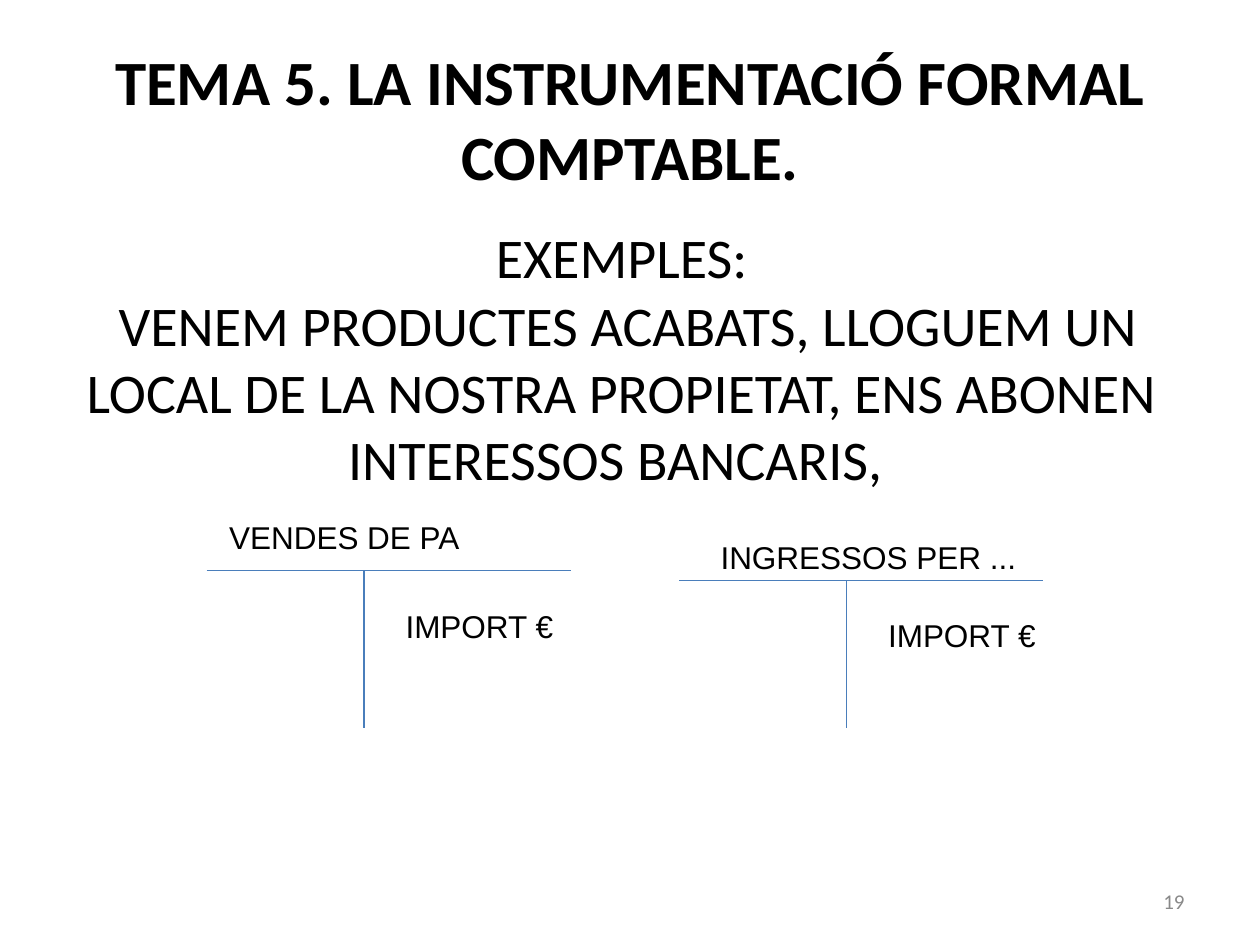
from dataclasses import dataclass

from lxml.etree import SubElement
from pptx import Presentation
from pptx.dml.color import RGBColor
from pptx.enum.shapes import MSO_CONNECTOR
from pptx.enum.text import MSO_ANCHOR, MSO_AUTO_SIZE, PP_ALIGN
from pptx.oxml.ns import qn
from pptx.util import Pt

PX = 9144  # EMU per px, 100 px to the inch


@dataclass(frozen=True)
class Theme:
    ink = RGBColor(0, 0, 0)
    gray = RGBColor(0x89, 0x89, 0x89)
    blue = RGBColor(0x4A, 0x7E, 0xBB)
    head = "Calibri"
    body = "Arial"
    title = Pt(36)
    lead = Pt(32)
    label = Pt(18)
    small = Pt(12)
    rule = Pt(0.75)


def write(shape, box, lines, align, anchor, **style):
    """Place a text shape and fill it with one paragraph per line."""
    for key, val in zip(("left", "top", "width", "height"), box):
        setattr(shape, key, val * PX)
    frame = shape.text_frame
    frame.word_wrap = True
    frame.auto_size = MSO_AUTO_SIZE.NONE
    frame.vertical_anchor = anchor
    frame.text = "\n".join(lines)
    for para in frame.paragraphs:
        para.alignment = align
        color = style["color"]
        for key, val in style.items():
            if key != "color":
                setattr(para.runs[0].font, key, val)
        para.runs[0].font.color.rgb = color


def rule(x1, y1, x2, y2):
    """Draw one thin account line."""
    line = slide.shapes.add_connector(
        MSO_CONNECTOR.STRAIGHT, x1 * PX, y1 * PX, x2 * PX, y2 * PX)
    line.line.color.rgb = Theme.blue
    line.line.width = Theme.rule
    SubElement(line._element.spPr, qn("a:effectLst"))


deck = Presentation()
deck.slide_width, deck.slide_height = 1000 * PX, 750 * PX
slide = deck.slides.add_slide(deck.slide_layouts[5])

# Title
write(slide.shapes.title, (75, 23, 850, 141),
      ["TEMA 5. LA INSTRUMENTACIÓ FORMAL COMPTABLE."],
      PP_ALIGN.CENTER, MSO_ANCHOR.MIDDLE,
      name=Theme.head, size=Theme.title, bold=True, color=Theme.ink)

# Examples and page number
examples = ["EXEMPLES:",
            " VENEM PRODUCTES ACABATS, LLOGUEM UN LOCAL DE LA NOSTRA "
            "PROPIETAT, ENS ABONEN INTERESSOS BANCARIS, "]
notes = [
    ((18, 172, 951, 508), examples, PP_ALIGN.CENTER, MSO_ANCHOR.TOP,
     Theme.lead, Theme.ink),
    ((717, 695, 233, 40), ["19"], PP_ALIGN.RIGHT, MSO_ANCHOR.MIDDLE,
     Theme.small, Theme.gray),
]
for box, lines, align, anchor, size, color in notes:
    write(slide.shapes.add_textbox(0, 0, 0, 0), box, lines, align, anchor,
          name=Theme.head, size=size, color=color)

# T accounts: left, top and stem of each, then its labels
accounts = [
    (164, 453, 289, [("VENDES DE PA", (172, 406, 250, 40)),
                     ("IMPORT €", (312, 477, 141, 40))]),
    (539, 461, 672, [("INGRESSOS PER ...", (562, 422, 281, 40)),
                     ("IMPORT €", (695, 484, 156, 40))]),
]
for left, top, stem, labels in accounts:
    rule(left, top, left + 289, top)
    rule(stem, top, stem, 578)
    for text, box in labels:
        write(slide.shapes.add_textbox(0, 0, 0, 0), box, [text],
              PP_ALIGN.LEFT, MSO_ANCHOR.TOP,
              name=Theme.body, size=Theme.label, color=Theme.ink)

deck.save("out.pptx")
